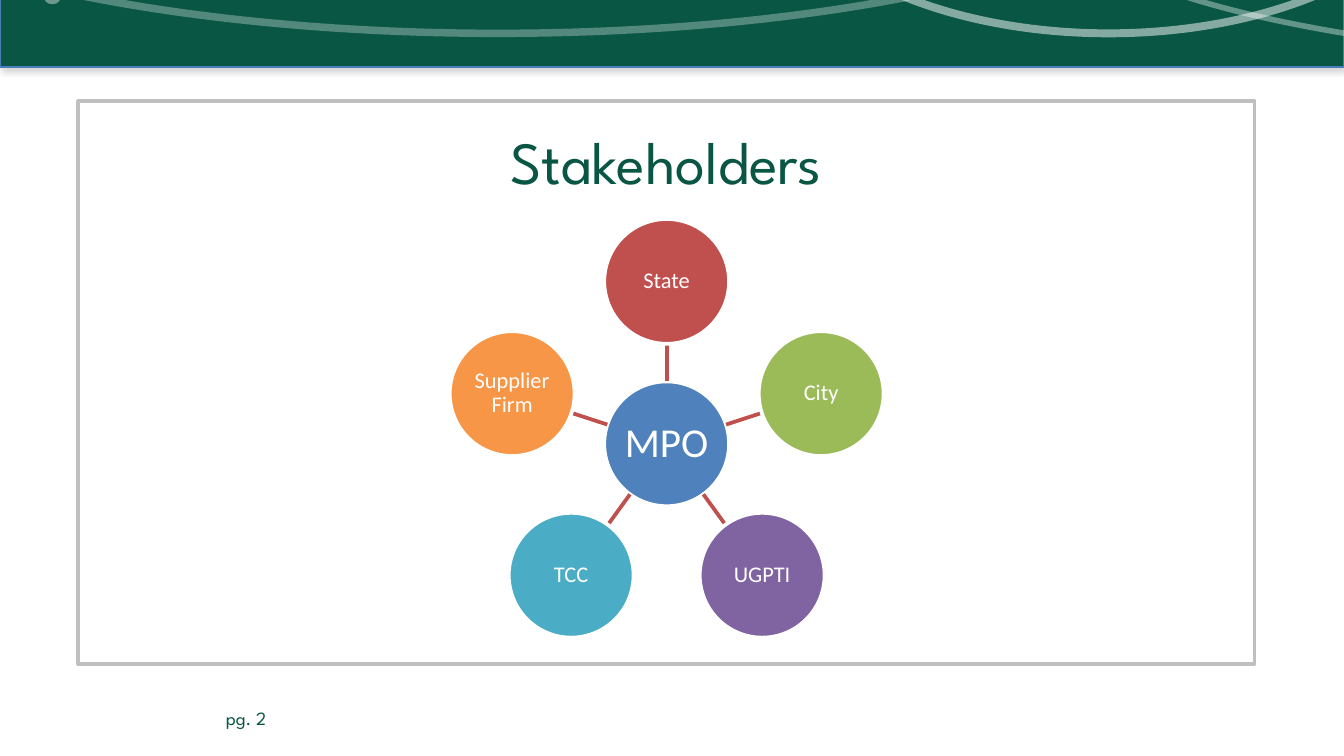
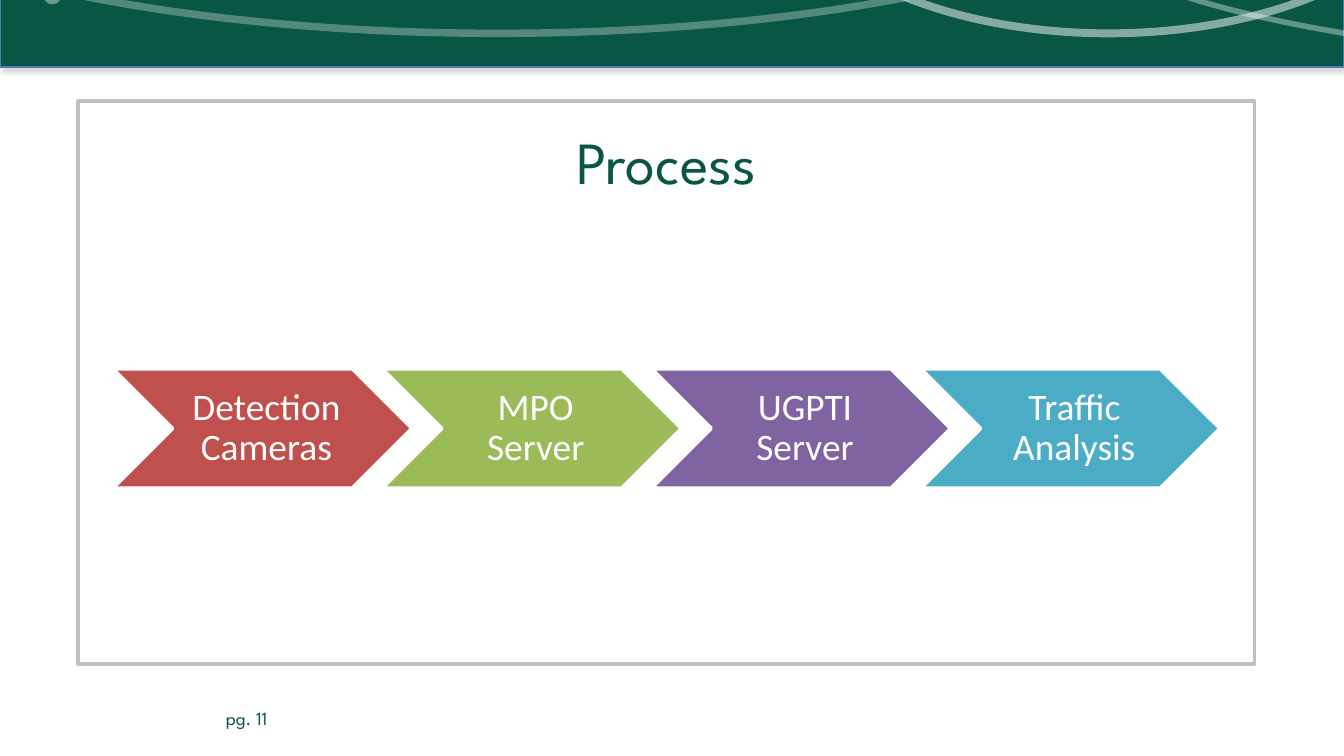
from math import cos, radians, sin

from lxml.etree import SubElement
from pptx import Presentation
from pptx.dml.color import RGBColor
from pptx.enum.shapes import MSO_CONNECTOR as LINK, MSO_SHAPE as SHAPE
from pptx.enum.text import MSO_ANCHOR as ANCHOR, MSO_AUTO_SIZE as FIT, PP_ALIGN as ALIGN
from pptx.oxml.ns import qn
from pptx.util import Cm, Pt

GREEN, WHITE, GREY, BAND_EDGE = "095644", "FFFFFF", "BFBFBF", "4A7EBB"
BLUE, RED, LIME, PURPLE, TEAL, ORANGE = (
    "4F81BD", "C0504D", "9BBB59", "8064A2", "4BACC6", "F79646")
HEAD_FONT, BODY_FONT = "League Spartan", "Calibri"
TITLE_ONLY = 5

# Hub diagram geometry, in centimetres
HUB_X, HUB_Y = 12.6, 8.39
ORBIT, RADIUS = 3.07, 1.18


def paint(color_format, color, alpha=None):
    """Set a colour, with an optional opacity in percent."""
    color_format.rgb = RGBColor.from_string(color)
    if alpha is not None:
        node = color_format._xFill.find(qn("a:srgbClr"))
        SubElement(node, qn("a:alpha"), val=str(alpha * 1000))


def add_figure(page, kind, place, fill=None, fill_alpha=None,
               line=None, width=1, line_alpha=None):
    figure = page.shapes.add_shape(kind, *map(Cm, place))
    figure.shadow.inherit = False
    if fill:
        figure.fill.solid()
        paint(figure.fill.fore_color, fill, fill_alpha)
    else:
        figure.fill.background()
    if line:
        figure.line.width = Pt(width)
        figure.line.fill.solid()
        paint(figure.line.color, line, line_alpha)
    else:
        figure.line.fill.background()
    return figure


def write(box, text, size, font, color, align=ALIGN.CENTER, anchor=ANCHOR.TOP):
    frame = box.text_frame
    frame.word_wrap = True
    frame.auto_size = FIT.NONE
    frame.vertical_anchor = anchor
    para = frame.paragraphs[0]
    para.text = text
    para.alignment = align
    para.font.size = Pt(size)
    para.font.name = font
    paint(para.font.color, color)
    return frame


def add_label_shape(page, kind, place, text, size, fill, insets):
    """Coloured shape with a white rim and a centred label."""
    figure = add_figure(page, kind, place, fill, line=WHITE, width=2)
    frame = write(figure, text, size, BODY_FONT, WHITE, anchor=ANCHOR.MIDDLE)
    frame.paragraphs[0].line_spacing = 0.9
    (frame.margin_left, frame.margin_top,
     frame.margin_right, frame.margin_bottom) = map(Cm, insets)


def add_band(page):
    band = add_figure(page, SHAPE.RECTANGLE, (0, -0.3, 25.4, 1.57),
                      GREEN, line=BAND_EDGE, width=0.75)
    effects = band._element.spPr.find(qn("a:effectLst"))
    shadow = SubElement(effects, qn("a:outerShdw"), blurRad=str(Pt(3.1)),
                        dist=str(Pt(1.8)), dir="5400000", rotWithShape="0")
    tint = SubElement(shadow, qn("a:srgbClr"), val="808080")
    SubElement(tint, qn("a:alpha"), val="35000")

    # Sweeping arcs and small dots
    for place, width, alpha in (
            ((-4.24, -7.14, 27.3, 7.77), 4, 30),
            ((14.6, -6.1, 12.7, 6.73), 4.25, 50),
            ((19.99, -4.78, 26.59, 5.99), 3, 37)):
        add_figure(page, SHAPE.OVAL, place, line=WHITE, width=width, line_alpha=alpha)
    for place, alpha in (((0.84, -0.15, 0.3, 0.23), 40),
                         ((6.73, 13.39, 0.25, 0.18), 30)):
        add_figure(page, SHAPE.OVAL, place, WHITE, fill_alpha=alpha)


def add_page(deck, heading, number):
    page = deck.slides.add_slide(deck.slide_layouts[TITLE_ONLY])
    add_band(page)
    add_figure(page, SHAPE.RECTANGLE, (1.48, 1.91, 22.23, 10.64),
               WHITE, line=GREY, width=2)

    # Title, brought in front of the panel
    title = page.shapes.title
    title.left, title.top, title.width, title.height = map(Cm, (2.11, 2.23, 20.96, 1.04))
    write(title, heading, 32, HEAD_FONT, GREEN)
    title.element.getparent().append(title.element)
    return page


def add_page_number(page, number):
    footer = page.shapes.add_textbox(*map(Cm, (4.02, 13.24, 2.34, 0.76)))
    write(footer, f"pg. {number}", 10, HEAD_FONT, GREEN, ALIGN.LEFT)


def add_spoke(page, angle):
    """Line across the gap between the hub and an outer circle."""
    ends = [Cm(value) for reach in (RADIUS, ORBIT - RADIUS)
            for value in (HUB_X + reach * cos(angle), HUB_Y + reach * sin(angle))]
    spoke = page.shapes.add_connector(LINK.STRAIGHT, *ends)
    spoke.line.width = Pt(2)
    paint(spoke.line.color, RED)
    SubElement(spoke._element.spPr, qn("a:effectLst"))


def add_circle(page, x, y, text, size, fill):
    place = (x - RADIUS, y - RADIUS, 2 * RADIUS, 2 * RADIUS)
    add_label_shape(page, SHAPE.OVAL, place, text, size, fill, [0] * 4)


def add_hub(page, center, partners):
    add_circle(page, HUB_X, HUB_Y, center, 22, BLUE)
    for index, (name, color) in enumerate(partners):
        angle = radians(-90 + index * 360 / len(partners))
        add_spoke(page, angle)
        add_circle(page, HUB_X + ORBIT * cos(angle), HUB_Y + ORBIT * sin(angle),
                   name, 12, color)


def add_process(page, steps):
    for index, (name, color) in enumerate(steps):
        add_label_shape(page, SHAPE.CHEVRON, (2.13 + index * 5.09, 6.97, 5.66, 2.26),
                        name, 20, color, (0.23, 0.08, 0.08, 0.08))


def main():
    deck = Presentation()
    deck.slide_width, deck.slide_height = Cm(25.4), Cm(14.29)

    # Stakeholders
    page = add_page(deck, "Stakeholders", 2)
    add_hub(page, "MPO", [("State", RED), ("City", LIME), ("UGPTI", PURPLE),
                          ("TCC", TEAL), ("Supplier Firm", ORANGE)])
    add_page_number(page, 2)

    # Process
    page = add_page(deck, "Process", 11)
    add_process(page, [("Detection Cameras", RED), ("MPO Server", LIME),
                       ("UGPTI Server", PURPLE), ("Traffic Analysis", TEAL)])
    add_page_number(page, 11)

    deck.save("out.pptx")


if __name__ == "__main__":
    main()
